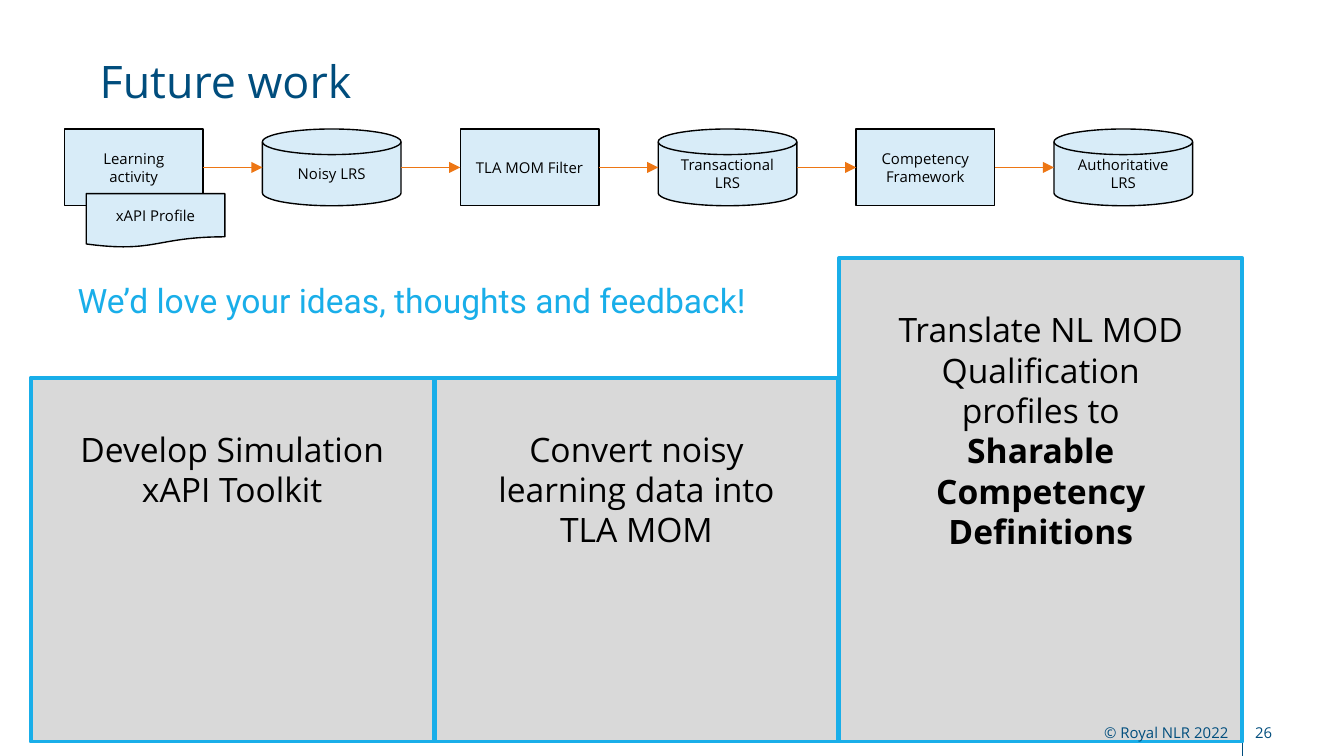
from itertools import pairwise

from pptx import Presentation
from pptx.dml.color import RGBColor
from pptx.enum.shapes import MSO_CONNECTOR, MSO_SHAPE
from pptx.enum.text import MSO_ANCHOR, PP_ALIGN
from pptx.oxml.ns import qn
from pptx.util import Cm, Pt
from lxml.etree import SubElement

NAVY, BLUE, PALE = "004D7D", "19AEE9", "D8ECF8"
GREY, BLACK, ORANGE = "D9D9D9", "000000", "ED7614"
LEFT, MID, RIGHT = PP_ALIGN.LEFT, PP_ALIGN.CENTER, PP_ALIGN.RIGHT


def color(text):
    return RGBColor.from_string(text)


class Deck:
    """Holds the style and the current slide, and draws each kind of element."""

    def __init__(self):
        self.font = "Open Sans"
        self.show = Presentation()
        self.show.slide_width, self.show.slide_height = Cm(25.4), Cm(14.29)
        self.slide = self.show.slides.add_slide(self.show.slide_layouts[5])
        self.shapes = self.slide.shapes

    def words(self, shape, parts, size, ink, align, anchor, font=None):
        frame = shape.text_frame
        frame.word_wrap = True
        frame.vertical_anchor = anchor
        line = frame.paragraphs[0]
        line.alignment = align
        for num, part in enumerate(parts):
            run = line.add_run()
            run.text = part
            run.font.name = font or self.font
            run.font.size = Pt(size)
            run.font.bold = num > 0
            run.font.color.rgb = color(ink)

    def title(self, text, x, y, w, h):
        head = self.shapes.title
        head.left, head.top, head.width, head.height = Cm(x), Cm(y), Cm(w), Cm(h)
        self.words(head, [text], 24, NAVY, LEFT, MSO_ANCHOR.TOP)

    def label(self, parts, x, y, w, h, size, ink, align=LEFT,
              anchor=MSO_ANCHOR.TOP, font=None):
        box = self.shapes.add_textbox(Cm(x), Cm(y), Cm(w), Cm(h))
        self.words(box, parts, size, ink, align, anchor, font)

    def block(self, kind, x, y, w, h, fill, edge, width):
        shape = self.shapes.add_shape(kind, Cm(x), Cm(y), Cm(w), Cm(h))
        shape.shadow.inherit = False
        shape.fill.solid()
        shape.fill.fore_color.rgb = color(fill)
        shape.line.color.rgb = color(edge)
        shape.line.width = Pt(width)
        return shape

    def card(self, parts, x, y, w, h):
        self.block(MSO_SHAPE.RECTANGLE, x, y, w, h, GREY, BLUE, 2)
        self.label(parts, x + 0.64, y + 0.84, w - 1.28, h - 2, 18, BLACK, MID)

    def step(self, kind, text, x, y, w, h):
        shape = self.block(kind, x, y, w, h, PALE, BLACK, 0.75)
        self.words(shape, [text], 8, BLACK, MID, MSO_ANCHOR.MIDDLE)
        return shape

    def line(self, x1, y1, x2, y2, ink, width):
        line = self.shapes.add_connector(MSO_CONNECTOR.STRAIGHT, x1, y1, x2, y2)
        line.line.color.rgb = color(ink)
        line.line.width = Pt(width)
        SubElement(line._element.spPr, qn("a:effectLst"))
        return line

    def arrow(self, start, end):
        y = start.top + start.height // 2
        line = self.line(start.left + start.width, y, end.left, y, ORANGE, 0.75)
        edge = line._element.spPr.find(qn("a:ln"))
        SubElement(edge, qn("a:tailEnd"), type="triangle")
        box = MSO_SHAPE.FLOWCHART_PROCESS
        if start.auto_shape_type == box:
            line.begin_connect(start, 3)
        if end.auto_shape_type == box:
            line.end_connect(end, 1)


def main():
    deck = Deck()
    deck.line(Cm(23.47), Cm(13.64), Cm(23.47), Cm(14.29), NAVY, 0.25)

    cards = [
        (7.14, ["Develop Simulation xAPI Toolkit"]),
        (7.14, ["Convert noisy learning data into TLA MOM"]),
        (4.88, ["Translate NL MOD Qualification profiles to ",
                "Sharable Competency Definitions"]),
    ]
    for num, (top, parts) in reversed(list(enumerate(cards))):
        deck.card(parts, 0.58 + 7.64 * num, top, 7.62, 14.02 - top)

    deck.label(["© Royal NLR 2022"], 11.18, 13.46, 12.29, 0.76, 8, NAVY,
               RIGHT, MSO_ANCHOR.MIDDLE)
    deck.label(["26"], 23.47, 13.46, 1.17, 0.76, 8, NAVY,
               anchor=MSO_ANCHOR.MIDDLE)
    deck.title("Future work", 1.63, 0.89, 20.29, 1.27)

    names = ["Learning activity", "Noisy LRS", "TLA MOM Filter",
             "Transactional LRS", "Competency Framework", "Authoritative LRS"]
    kinds = [MSO_SHAPE.FLOWCHART_PROCESS, MSO_SHAPE.FLOWCHART_MAGNETIC_DISK]
    steps = [deck.step(kinds[num % 2], name, 1.22 + 3.74 * num, 2.44, 2.62, 1.45)
             for num, name in enumerate(names)]
    deck.step(MSO_SHAPE.FLOWCHART_DOCUMENT, "xAPI Profile", 1.63, 3.66, 2.62, 1.02)
    for start, end in pairwise(steps):
        deck.arrow(start, end)

    deck.label(["We’d love your ideas, thoughts and feedback!"],
               1.22, 5.16, 14.88, 1.02, 18, BLUE, font="Roboto")
    deck.show.save("out.pptx")


if __name__ == "__main__":
    main()
